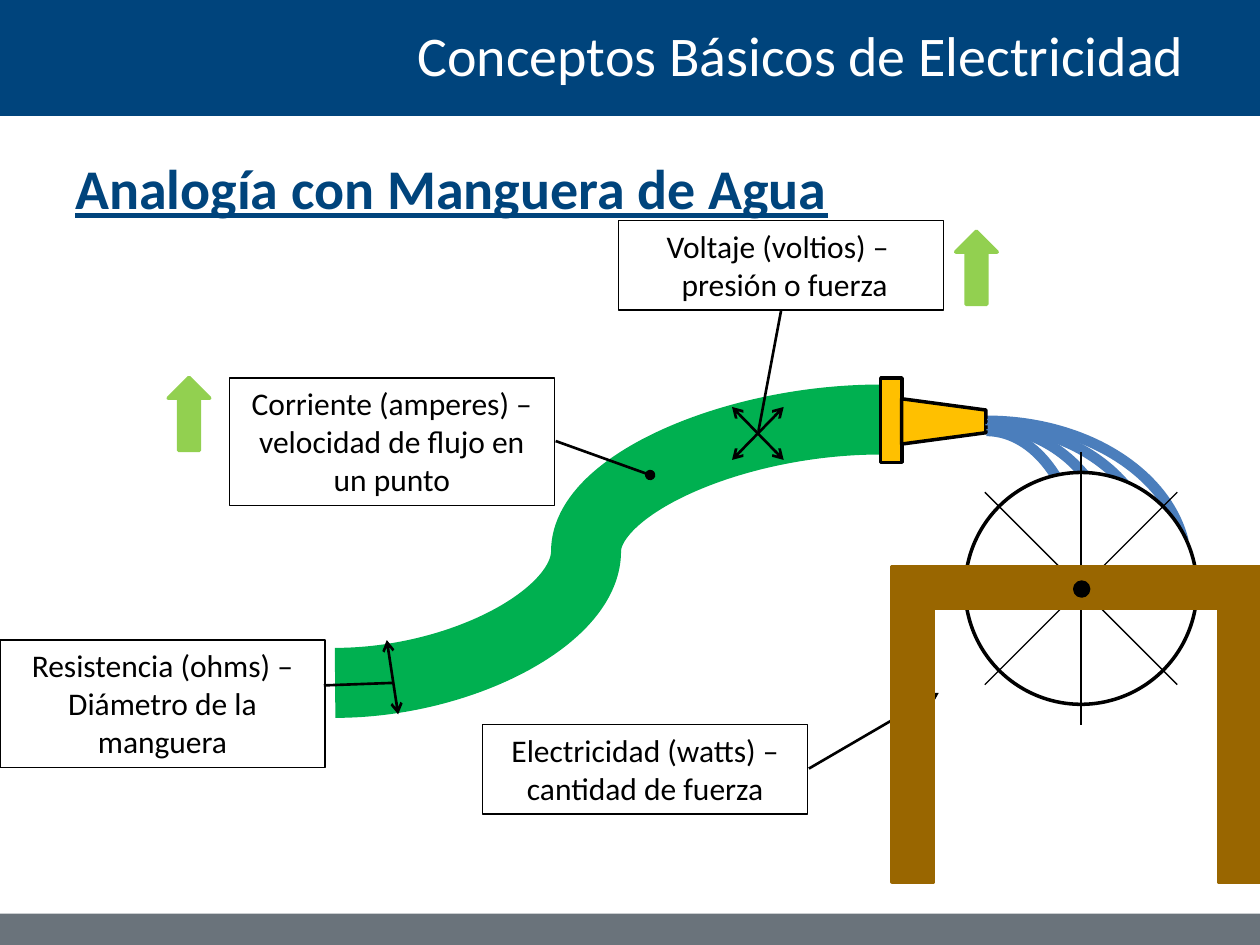
from dataclasses import dataclass
from math import cos, radians, sin
from typing import Optional

from lxml import etree
from pptx import Presentation
from pptx import util as u
from pptx.dml.color import RGBColor
from pptx.enum import shapes as sh
from pptx.enum import text as tx
from pptx.oxml import ns

NAVY, GRAY, WHITE, BLACK = "00447C", "6A737B", "FFFFFF", "000000"
WATER, HOSE, GOLD = "4B7EBC", "00B050", "FFC000"
WOOD, LIME = "996600", "92D050"
KIND = sh.MSO_SHAPE


@dataclass
class Box:
    x: float
    y: float
    w: float
    h: float


@dataclass
class Jet:
    box: Box
    end: float
    drop: float


@dataclass
class Note:
    box: Box
    lines: list[str]


@dataclass
class Link:
    start: tuple[float, float]
    stop: tuple[float, float]
    head: Optional[str] = None
    tail: Optional[str] = None


def color(code: str) -> RGBColor:
    return RGBColor.from_string(code)


def place(box: Box) -> list[u.Length]:
    return [u.Inches(n) for n in (box.x, box.y, box.w, box.h)]


def shape(slide, kind, box: Box, fill: Optional[str] = None,
          line: Optional[str] = None, width: float = 2, turn: float = 0):
    item = slide.shapes.add_shape(kind, *place(box))
    item.shadow.inherit = False
    item.rotation = turn
    if fill:
        item.fill.solid()
        item.fill.fore_color.rgb = color(fill)
    else:
        item.fill.background()
    if line:
        item.line.color.rgb = color(line)
        item.line.width = u.Pt(width)
    else:
        item.line.fill.background()
    return item


def write(item, lines: list[str], size: float = 18, ink: str = BLACK,
          bold: bool = False, under: bool = False, hang: float = 0,
          align=tx.PP_ALIGN.CENTER, anchor=tx.MSO_ANCHOR.TOP) -> None:
    frame = item.text_frame
    frame.word_wrap = True
    frame.vertical_anchor = anchor
    for i, line in enumerate(lines):
        para = frame.add_paragraph() if i else frame.paragraphs[0]
        para.alignment = align
        if hang:
            props = para._p.get_or_add_pPr()
            props.set("marL", str(u.Inches(hang)))
            props.set("indent", str(-u.Inches(hang)))
        run = para.add_run()
        run.text = line
        font = run.font
        font.name, font.size = "Calibri", u.Pt(size)
        font.bold, font.underline = bold, under
        font.color.rgb = color(ink)


def join(slide, link: Link, width: float = 1.5, ink: str = BLACK,
         kind=sh.MSO_CONNECTOR.STRAIGHT):
    ends = [u.Inches(n) for n in (*link.start, *link.stop)]
    item = slide.shapes.add_connector(kind, *ends)
    item.line.color.rgb = color(ink)
    item.line.width = u.Pt(width)
    stroke = item.line._get_or_add_ln()
    for tag, style in (("a:headEnd", link.head), ("a:tailEnd", link.tail)):
        if style:
            etree.SubElement(stroke, ns.qn(tag)).set("type", style)
    etree.SubElement(item._element.spPr, ns.qn("a:effectLst"))
    return item


def label(slide, note: Note) -> None:
    write(shape(slide, KIND.RECTANGLE, note.box, line=BLACK, width=0.75),
          note.lines)


def spray(slide, jets: list[Jet], width: float, lift: float = 0) -> None:
    for jet in jets:
        b = jet.box
        arc = shape(slide, KIND.ARC, Box(b.x, b.y - lift * jet.drop, b.w, b.h),
                    line=WATER, width=width)
        arc.adjustments[0], arc.adjustments[1] = 162, jet.end


def hose(slide) -> None:
    tube = join(slide, Link((2.66, 5.42), (6.99, 3.33)), 40, HOSE,
                sh.MSO_CONNECTOR.CURVE)
    geom = tube._element.spPr.find(ns.qn("a:prstGeom"))
    bend = etree.SubElement(geom.find(ns.qn("a:avLst")), ns.qn("a:gd"))
    bend.set("name", "adj1")
    bend.set("fmla", "val 46000")
    shape(slide, KIND.RECTANGLE, Box(6.99, 3, 0.17, 0.67), GOLD, BLACK)
    shape(slide, KIND.TRAPEZOID, Box(7.31, 3.01, 0.36, 0.67), GOLD, BLACK,
          turn=90)


def wheel(slide, x: float, y: float, rim: float, reach: float) -> None:
    shape(slide, KIND.OVAL, Box(x - rim, y - rim, 2 * rim, 2 * rim),
          WHITE, BLACK)
    for angle in (90, 45, 135):
        dx, dy = reach * cos(radians(angle)), reach * sin(radians(angle))
        join(slide, Link((x - dx, y - dy), (x + dx, y + dy)), 0.75)


def stand(slide) -> None:
    shape(slide, KIND.RECTANGLE, Box(7.08, 4.5, 2.92, 0.33), WOOD, WOOD)
    for left in (7.08, 9.67):
        shape(slide, KIND.RECTANGLE, Box(left, 4.5, 0.33, 2.5), WOOD, WOOD)
    shape(slide, KIND.OVAL, Box(8.53, 4.62, 0.11, 0.11), BLACK, BLACK)


JETS = [Jet(Box(7.08, 3.42, 1.5, 2.25), 206.84, 0.01),
        Jet(Box(6.25, 3.34, 3.17, 2.33), 211.37, 0.01),
        Jet(Box(6.78, 3.39, 2.08, 2.19), 205.73, 0.02),
        Jet(Box(6.5, 3.38, 2.67, 2.19), 211.32, 0.02)]
OHMS = Note(Box(0, 5.08, 2.58, 1.01),
            ["Resistencia (ohms) – Diámetro de la manguera"])
AMPS = Note(Box(1.82, 3, 2.58, 1.01),
            ["Corriente (amperes) – velocidad de flujo en un punto"])
WATTS = Note(Box(3.83, 5.75, 2.58, 0.71),
             ["Electricidad (watts) – cantidad de fuerza"])
VOLTS = Note(Box(4.91, 1.75, 2.58, 0.71),
             ["Voltaje (voltios) – ", " presión o fuerza"])


def main() -> None:
    deck = Presentation()
    deck.slide_width, deck.slide_height = u.Inches(10), u.Inches(7.5)
    slide = deck.slides.add_slide(deck.slide_layouts[6])

    shape(slide, KIND.RECTANGLE, Box(0, 0, 10, 0.92), NAVY)
    shape(slide, KIND.RECTANGLE, Box(0, 7.25, 10, 0.25), GRAY)
    spray(slide, JETS, 6)
    title = slide.shapes.add_textbox(*place(Box(1.92, 0.08, 7.58, 0.7)))
    write(title, ["Conceptos Básicos de Electricidad"], 32, WHITE,
          align=tx.PP_ALIGN.RIGHT, anchor=tx.MSO_ANCHOR.MIDDLE)
    topic = slide.shapes.add_textbox(*place(Box(0.5, 1.17, 9, 1.25)))
    write(topic, ["Analogía con Manguera de Agua"], 32, NAVY, bold=True,
          under=True, hang=0.38, align=tx.PP_ALIGN.LEFT)

    hose(slide)
    spray(slide, JETS, 0.75, lift=1)
    join(slide, Link((3.07, 5.08), (3.16, 5.67), "arrow", "arrow"))
    join(slide, Link((3.12, 5.42), (2.57, 5.44)))
    label(slide, OHMS)
    join(slide, Link((4.41, 3.5), (5.16, 3.77), tail="oval"))
    label(slide, AMPS)

    wheel(slide, 8.58, 4.67, 0.92, 1.08)
    join(slide, Link((6.42, 6.1), (7.45, 5.5), tail="arrow"))
    label(slide, WATTS)
    stand(slide)

    join(slide, Link((6.02, 3.42), (6.2, 2.46)))
    label(slide, VOLTS)
    for top, foot in ((3.65, 3.23), (3.23, 3.65)):
        join(slide, Link((5.81, top), (6.22, foot), "arrow", "arrow"))
    for x, y in ((7.46, 1.96), (1.21, 3.12)):
        shape(slide, KIND.RIGHT_ARROW, Box(x, y, 0.58, 0.33), LIME, LIME,
              turn=270)
    deck.save("out.pptx")


if __name__ == "__main__":
    main()
